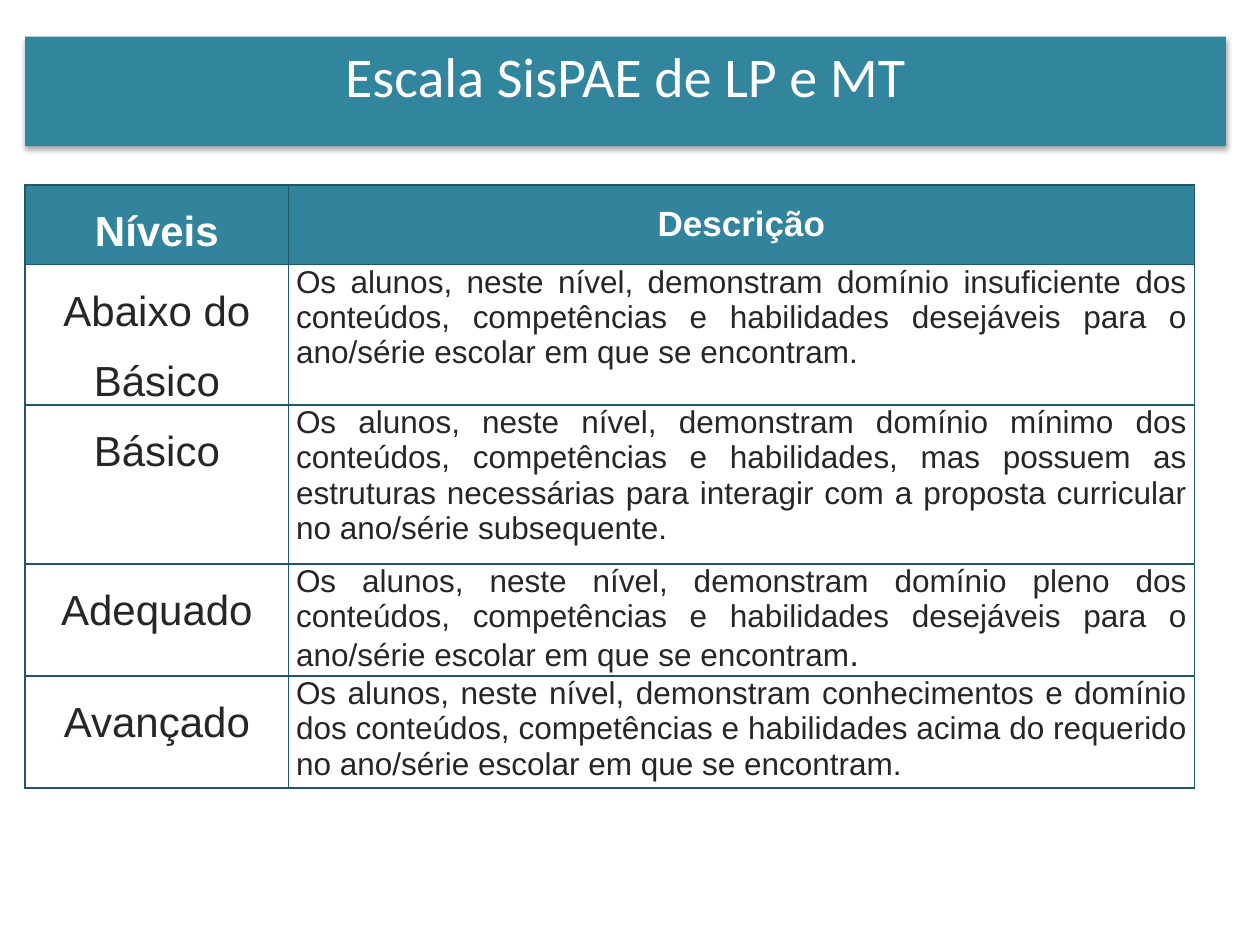
from dataclasses import dataclass

from lxml import etree
from pptx import Presentation
from pptx import util as u
from pptx.dml.color import RGBColor
from pptx.enum import text
from pptx.oxml import ns


@dataclass(frozen=True)
class Theme:
    banner: str = "31859C"
    header: str = "31849B"
    border: str = "215868"
    light: str = "FFFFFF"
    dark: str = "262626"
    title_font: str = "Calibri"
    body_font: str = "Arial"
    title_size: int = 32
    level_size: int = 24
    header_size: int = 20
    body_size: int = 18


HEADER = ("Níveis", "Descrição")
LEVELS = [
    ("Abaixo do Básico",
     ["Os alunos, neste nível, demonstram domínio insuficiente dos conteúdos, "
      "competências e habilidades desejáveis para o ano/série escolar em que se encontram."]),
    ("Básico",
     ["Os alunos, neste nível, demonstram domínio mínimo dos conteúdos, "
      "competências e habilidades, mas possuem as estruturas necessárias para "
      "interagir com a proposta curricular no ano/série subsequente."]),
    ("Adequado",
     ["Os alunos, neste nível, demonstram domínio pleno dos conteúdos, "
      "competências e habilidades desejáveis para o ano/série escolar em que se encontram",
      "."]),
    ("Avançado",
     ["Os alunos, neste nível, demonstram conhecimentos e domínio dos conteúdos, "
      "competências e habilidades acima do requerido no ano/série escolar em que se encontram."]),
]


class SlideBuilder:
    """Draws on a grid of 100 columns by 75 rows."""

    def __init__(self, presentation, theme):
        self.theme = theme
        self.column = presentation.slide_width / 100
        self.row = presentation.slide_height / 75
        self.slide = presentation.slides.add_slide(presentation.slide_layouts[5])

    def box(self, left, top, width, height):
        return (round(left * self.column), round(top * self.row),
                round(width * self.column), round(height * self.row))

    def style(self, paragraph, name, size, color, alignment, bold=False):
        paragraph.alignment = alignment
        font = paragraph.font
        font.name, font.size, font.bold = name, u.Pt(size), bold
        font.color.rgb = RGBColor.from_string(color)

    def title(self, words, *place):
        shape = self.slide.shapes.title
        shape.left, shape.top, shape.width, shape.height = self.box(*place)
        shape.fill.solid()
        shape.fill.fore_color.rgb = RGBColor.from_string(self.theme.banner)
        shape.line.fill.background()
        self.drop_shadow(shape)
        frame = shape.text_frame
        frame.text = words
        frame.word_wrap = True
        frame.auto_size = text.MSO_AUTO_SIZE.NONE
        frame.vertical_anchor = text.MSO_ANCHOR.TOP
        frame.margin_left = frame.margin_right = u.Inches(0.04)
        frame.margin_top = frame.margin_bottom = u.Inches(0.04)
        self.style(frame.paragraphs[0], self.theme.title_font, self.theme.title_size,
                   self.theme.light, text.PP_ALIGN.CENTER)

    def drop_shadow(self, shape):
        shape.shadow.inherit = False
        effects = shape._element.spPr.find(ns.qn("a:effectLst"))
        shadow = etree.SubElement(effects, ns.qn("a:outerShdw"), blurRad=str(u.Pt(3.1)),
                                  dist=str(u.Pt(1.8)), dir="5400000", rotWithShape="0")
        color = etree.SubElement(shadow, ns.qn("a:srgbClr"), val="000000")
        etree.SubElement(color, ns.qn("a:alpha"), val="35000")

    def table(self, left, top, widths, heights):
        place = self.box(left, top, sum(widths), sum(heights))
        table = self.slide.shapes.add_table(len(heights), len(widths), *place).table
        table.first_row = table.horz_banding = False
        for column, width in zip(table.columns, widths):
            column.width = round(width * self.column)
        for row, height in zip(table.rows, heights):
            row.height = round(height * self.row)
        return table

    def cell(self, cell, runs, sizes, color, alignment, fill=None, spacing=None, after=None):
        cell.margin_left = cell.margin_right = u.Inches(0.06)
        cell.margin_top = cell.margin_bottom = 0
        self.borders(cell)
        if fill:
            cell.fill.solid()
            cell.fill.fore_color.rgb = RGBColor.from_string(fill)
        else:
            cell.fill.background()
        paragraph = cell.text_frame.paragraphs[0]
        for words, size in zip(runs, sizes):
            run = paragraph.add_run()
            run.text = words
            if size != sizes[0]:
                run.font.size = u.Pt(size)
        self.style(paragraph, self.theme.body_font, sizes[0], color, alignment,
                   bold=fill is not None)
        if spacing:
            paragraph.line_spacing = spacing
        if after:
            paragraph.space_after = u.Pt(after)

    def borders(self, cell):
        properties = cell._tc.get_or_add_tcPr()
        for side in ("lnL", "lnR", "lnT", "lnB"):
            line = etree.SubElement(properties, ns.qn(f"a:{side}"), w=str(u.Pt(1)))
            fill = etree.SubElement(line, ns.qn("a:solidFill"))
            etree.SubElement(fill, ns.qn("a:srgbClr"), val=self.theme.border)


def main():
    presentation = Presentation()
    presentation.slide_width, presentation.slide_height = u.Inches(10), u.Inches(7.5)
    theme = Theme()
    builder = SlideBuilder(presentation, theme)
    center, justify = text.PP_ALIGN.CENTER, text.PP_ALIGN.JUSTIFY

    # Title banner
    builder.title("Escala SisPAE de LP e MT", 2, 2.9, 95.3, 8.7)

    # Table header
    table = builder.table(2, 14.7, (20.9, 71.9), (6.3, 11.1, 12.6, 8.9, 8.9))
    for index, (words, size, after) in enumerate(
            zip(HEADER, (theme.level_size, theme.header_size), (6, None))):
        builder.cell(table.cell(0, index), [words], [size], theme.light, center,
                     fill=theme.header, spacing=1.5, after=after)

    # Proficiency levels
    for index, (level, description) in enumerate(LEVELS, start=1):
        builder.cell(table.cell(index, 0), [level], [theme.level_size], theme.dark,
                     center, spacing=1.5, after=6)
        builder.cell(table.cell(index, 1), description,
                     [theme.body_size, theme.header_size], theme.dark, justify)

    presentation.save("out.pptx")


if __name__ == "__main__":
    main()
